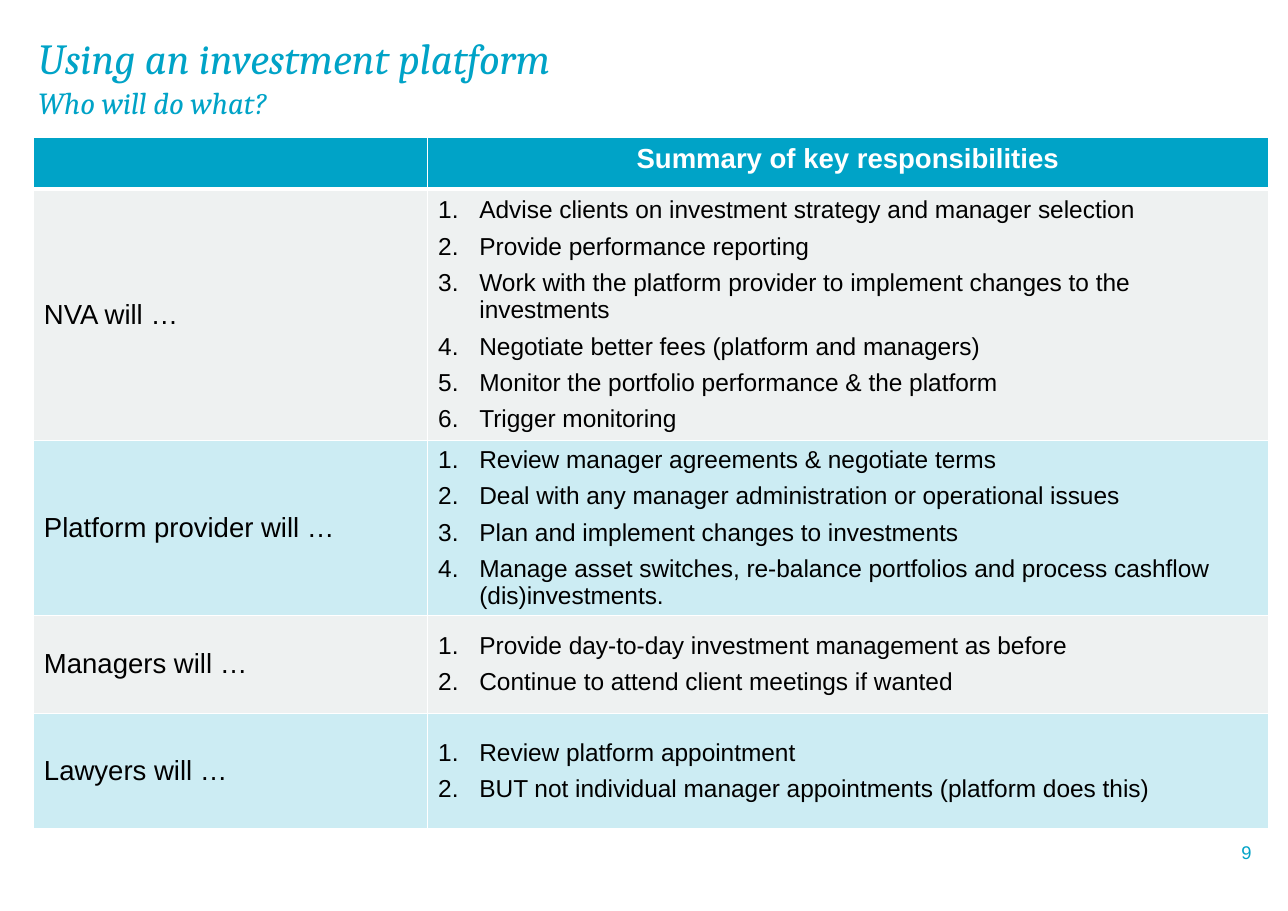
from dataclasses import dataclass

from lxml.etree import SubElement
from pptx import Presentation
from pptx.dml.color import RGBColor
from pptx.enum.shapes import MSO_CONNECTOR
from pptx.enum.text import MSO_ANCHOR, PP_ALIGN
from pptx.oxml import parse_xml
from pptx.oxml.ns import nsdecls, qn
from pptx.util import Cm, Pt


@dataclass(frozen=True)
class Theme:
    teal: str = "00A3C7"
    grey: str = "EEF1F1"
    white: str = "FFFFFF"
    black: str = "000000"
    tint: int = 20  # opacity of the teal rows, per cent
    heading_font: str = "Cambria"
    body_font: str = "Arial"
    title: int = 28
    subtitle: int = 20
    label: int = 18
    item: int = 16
    number: int = 12


THEME = Theme()
COLUMN_WIDTHS = (9.09, 19.4)
ROW_HEIGHTS = (1.19, 5.69, 4.01, 2.26, 2.67)
LIST_INDENT = Cm(0.95)
RESPONSIBILITIES = [
    ("NVA will …", [
        "Advise clients on investment strategy and manager selection",
        "Provide performance reporting",
        "Work with the platform provider to implement changes to the investments",
        "Negotiate better fees (platform and managers)",
        "Monitor the portfolio performance & the platform",
        "Trigger monitoring",
    ]),
    ("Platform provider will …", [
        "Review manager agreements & negotiate terms",
        "Deal with any manager administration or operational issues",
        "Plan and implement changes to investments",
        "Manage asset switches, re-balance portfolios and process cashflow "
        "(dis)investments.",
    ]),
    ("Managers will …", [
        "Provide day-to-day investment management as before",
        "Continue to attend client meetings if wanted",
    ]),
    ("Lawyers will …", [
        "Review platform appointment",
        "BUT not individual manager appointments (platform does this)",
    ]),
]


def style_run(r, size, color, font=THEME.body_font, bold=False, italic=False):
    r.font.name, r.font.size = font, Pt(size)
    r.font.bold, r.font.italic = bold, italic
    r.font.color.rgb = RGBColor.from_string(color)


def add_text_box(slide, left, top, width, height, text, side_inset):
    tf = slide.shapes.add_textbox(Cm(left), Cm(top), Cm(width), Cm(height)).text_frame
    tf.word_wrap = True
    tf.margin_left = tf.margin_right = Cm(side_inset)
    tf.margin_top = tf.margin_bottom = Cm(0.15)
    tf.text = text
    return tf


def add_title(slide, title, subtitle):
    tf = add_text_box(slide, 0.6, 0.59, 23.44, 3.51, f"{title}\v{subtitle}", 0.28)
    for r, size in zip(tf.paragraphs[0].runs, (THEME.title, THEME.subtitle)):
        style_run(r, size, THEME.teal, THEME.heading_font, italic=True)


def add_footer(slide, number):
    rule = slide.shapes.add_connector(
        MSO_CONNECTOR.STRAIGHT, Cm(1.04), Cm(19.13), Cm(28.75), Cm(19.13))
    rule.line.color.rgb = RGBColor.from_string(THEME.black)
    rule.line.width = Pt(0.75)
    SubElement(rule._element.spPr, qn("a:effectLst"))

    tf = add_text_box(slide, 27.13, 19.35, 2.06, 0.61, number, 0.33)
    tf.vertical_anchor = MSO_ANCHOR.MIDDLE
    p = tf.paragraphs[0]
    p.alignment = PP_ALIGN.RIGHT
    style_run(p.runs[0], THEME.number, THEME.teal)


def set_borders(cell, bottom=1):
    widths = {"lnL": 1, "lnR": 1, "lnT": 1, "lnB": bottom}
    for i, (side, width) in enumerate(widths.items()):
        cell._tc.get_or_add_tcPr().insert(i, parse_xml(
            f'<a:{side} {nsdecls("a")} w="{Pt(width)}"><a:solidFill>'
            f'<a:srgbClr val="{THEME.white}"/></a:solidFill></a:{side}>'))


def fill_cell(cell, color, opacity=100):
    cell.fill.solid()
    cell.fill.fore_color.rgb = RGBColor.from_string(color)
    if opacity < 100:
        clr = cell._tc.tcPr.find(f"{qn('a:solidFill')}/{qn('a:srgbClr')}")
        SubElement(clr, qn("a:alpha")).set("val", str(opacity * 1000))


def write_cell(cell, text, size, color, bold=False):
    cell.text_frame.text = text
    for p in cell.text_frame.paragraphs:
        for r in p.runs:
            style_run(r, size, color, bold=bold)


def number_paragraphs(tf):
    for p in tf.paragraphs:
        pPr = p._p.get_or_add_pPr()
        pPr.set("marL", str(LIST_INDENT))
        pPr.set("indent", str(-LIST_INDENT))
        SubElement(pPr, qn("a:buFont")).set("typeface", THEME.body_font)
        SubElement(pPr, qn("a:buAutoNum")).set("type", "arabicPeriod")
        p.space_after = Pt(6)


def add_responsibility_table(slide, heading, groups):
    table = slide.shapes.add_table(
        len(ROW_HEIGHTS), len(COLUMN_WIDTHS), Cm(0.76), Cm(3.17),
        Cm(sum(COLUMN_WIDTHS)), Cm(sum(ROW_HEIGHTS))).table
    table.horz_banding = False
    for column, width in zip(table.columns, COLUMN_WIDTHS):
        column.width = Cm(width)
    for row, height in zip(table.rows, ROW_HEIGHTS):
        row.height = Cm(height)

    # Header row
    for cell in table.rows[0].cells:
        fill_cell(cell, THEME.teal)
        set_borders(cell, bottom=3)
    header = table.cell(0, 1)
    write_cell(header, heading, THEME.label, THEME.white, bold=True)
    header.text_frame.paragraphs[0].alignment = PP_ALIGN.CENTER

    # One row per party, alternating grey and pale teal
    for i, (party, items) in enumerate(groups, start=1):
        label, duties = table.rows[i].cells
        write_cell(label, party, THEME.label, THEME.black)
        write_cell(duties, "\n".join(items), THEME.item, THEME.black)
        number_paragraphs(duties.text_frame)
        for cell in (label, duties):
            cell.vertical_anchor = MSO_ANCHOR.MIDDLE
            cell.margin_top = cell.margin_bottom = Cm(0)
            if i % 2:
                fill_cell(cell, THEME.grey)
            else:
                fill_cell(cell, THEME.teal, THEME.tint)
            set_borders(cell)


def main():
    prs = Presentation()
    prs.slide_width, prs.slide_height = Cm(29.7), Cm(21)
    slide = prs.slides.add_slide(prs.slide_layouts[6])
    add_title(slide, "Using an investment platform", "Who will do what?")
    add_footer(slide, "9")
    add_responsibility_table(slide, "Summary of key responsibilities", RESPONSIBILITIES)
    prs.save("out.pptx")


if __name__ == "__main__":
    main()
